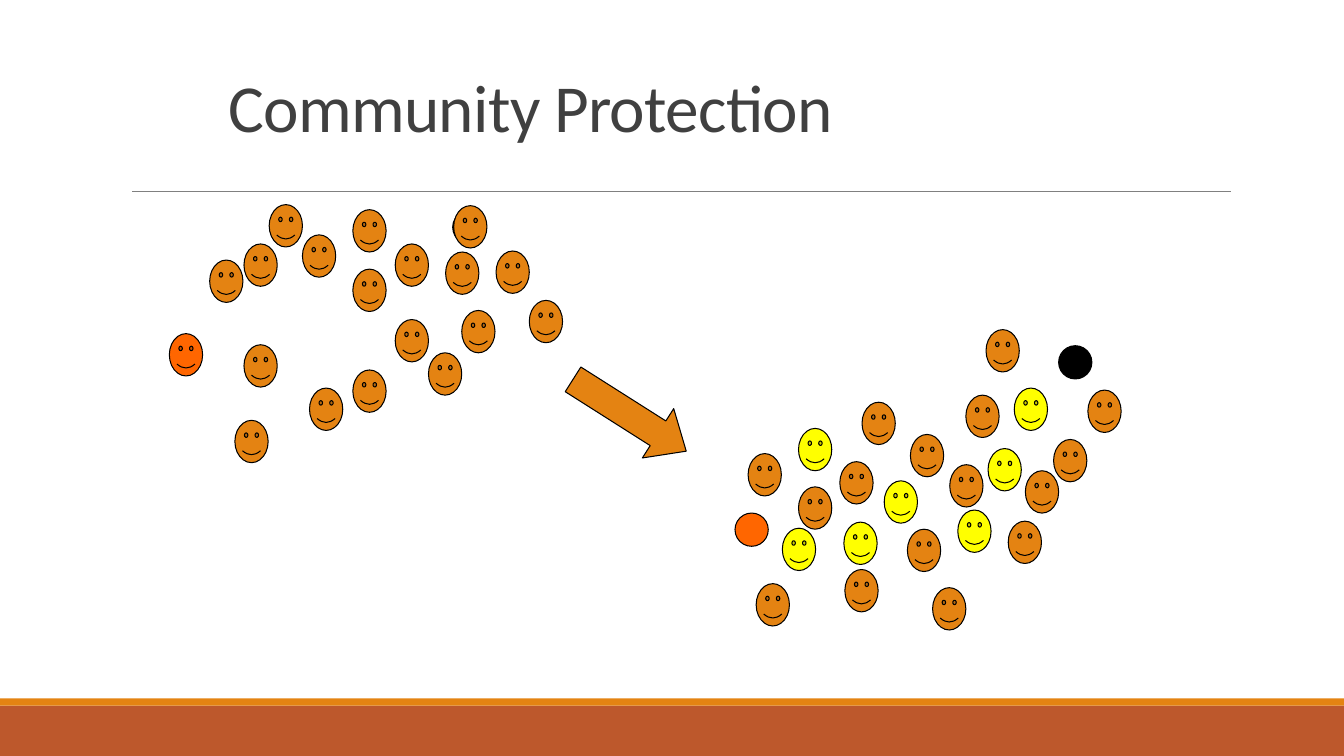
from dataclasses import dataclass

from lxml import etree
from pptx import Presentation
from pptx import util as u
from pptx.dml.color import RGBColor
from pptx.enum import shapes, text
from pptx.oxml.ns import qn
from pptx.shapes.autoshape import Shape
from pptx.slide import Slide

EMU_PER_PX = 9144  # 100 px to the inch
PAGE_WIDTH, PAGE_HEIGHT = 1333, 750


@dataclass(frozen=True)
class Theme:
    person: str = "E48312"
    immune: str = "FFFF00"
    infected: str = "FF6600"
    dark: str = "000000"
    footer: str = "BD582C"
    rule: str = "808080"
    title: str = "404040"
    font: str = "Calibri"
    title_size: int = 48
    outline_width: float = 0.75
    rule_width: float = 0.5


@dataclass(frozen=True)
class Box:
    left: int
    top: int
    width: int
    height: int


@dataclass(frozen=True)
class Crowd:
    """Equal figures in one colour, given by their top left corners."""
    kind: shapes.MSO_SHAPE
    width: int
    height: int
    colour: str
    corners: tuple[tuple[int, int], ...]


THEME = Theme()
FACE = (shapes.MSO_SHAPE.SMILEY_FACE, 33, 42)
DOT = (shapes.MSO_SHAPE.OVAL, 33, 33)
SMILE = 0.0465

CROWDS = (
    Crowd(*DOT, THEME.dark, ((1050, 343), (449, 209))),
    Crowd(*DOT, THEME.infected, ((729, 509),)),
    # Community before protection
    Crowd(*FACE, THEME.person, (
        (307, 385), (350, 367), (425, 350), (392, 317), (300, 233), (392, 242),
        (458, 308), (350, 208), (442, 250), (525, 298), (242, 342), (242, 242),
        (350, 267), (208, 258), (492, 249), (267, 203), (233, 417), (450, 204))),
    Crowd(*FACE, THEME.infected, ((168, 331),)),
    # Community with immune members
    Crowd(*FACE, THEME.person, (
        (1000, 517), (838, 565), (742, 450), (833, 458), (900, 525), (903, 431),
        (750, 579), (1045, 436), (792, 483), (1017, 467), (925, 583), (958, 392),
        (978, 327), (1079, 387), (942, 461), (855, 399))),
    Crowd(*FACE, THEME.immune, (
        (792, 425), (877, 477), (950, 506), (837, 518), (980, 445), (776, 524),
        (1006, 385))),
)


def px(length: int) -> u.Emu:
    return u.Emu(length * EMU_PER_PX)


def place(box: Box) -> tuple[u.Emu, ...]:
    return px(box.left), px(box.top), px(box.width), px(box.height)


def add_figure(page: Slide, kind: shapes.MSO_SHAPE, box: Box, colour: str,
               outlined: bool = True) -> Shape:
    figure = page.shapes.add_shape(kind, *place(box))
    figure.shadow.inherit = False
    figure.fill.solid()
    figure.fill.fore_color.rgb = RGBColor.from_string(colour)
    if outlined:
        figure.line.color.rgb = RGBColor.from_string(THEME.dark)
        figure.line.width = u.Pt(THEME.outline_width)
    else:
        figure.line.fill.background()
    return figure


def add_crowd(page: Slide, crowd: Crowd) -> None:
    for left, top in crowd.corners:
        box = Box(left, top, crowd.width, crowd.height)
        figure = add_figure(page, crowd.kind, box, crowd.colour)
        if crowd.kind == shapes.MSO_SHAPE.SMILEY_FACE:
            figure.adjustments[0] = SMILE


def add_frame(page: Slide) -> None:
    """Footer bands and the rule under the title."""
    bar = shapes.MSO_SHAPE.RECTANGLE
    add_figure(page, bar, Box(0, 700, PAGE_WIDTH, 50), THEME.footer, outlined=False)
    add_figure(page, bar, Box(0, 693, PAGE_WIDTH, 7), THEME.person, outlined=False)
    rule = page.shapes.add_connector(
        shapes.MSO_CONNECTOR.STRAIGHT, px(131), px(190), px(1221), px(190))
    rule.line.color.rgb = RGBColor.from_string(THEME.rule)
    rule.line.width = u.Pt(THEME.rule_width)
    etree.SubElement(rule._element.spPr, qn("a:effectLst"))


def add_title(page: Slide, words: str) -> None:
    frame = page.shapes.add_textbox(*place(Box(217, 25, 900, 125))).text_frame
    frame.word_wrap = True
    frame.vertical_anchor = text.MSO_ANCHOR.BOTTOM
    para = frame.paragraphs[0]
    para.line_spacing = 0.85
    para.font.name = THEME.font
    para.font.size = u.Pt(THEME.title_size)
    para.font.color.rgb = RGBColor.from_string(THEME.title)
    span = para.add_run()
    span.text = words
    span._r.get_or_add_rPr().set("spc", "-50")


def add_arrow(page: Slide) -> None:
    arrow = add_figure(page, shapes.MSO_SHAPE.RIGHT_ARROW,
                       Box(558, 383, 133, 58), THEME.person)
    arrow.rotation = 32.4
    arrow.adjustments[0] = 0.5
    arrow.adjustments[1] = 0.571


def main() -> None:
    deck = Presentation()
    deck.slide_width, deck.slide_height = px(PAGE_WIDTH), px(PAGE_HEIGHT)
    page = deck.slides.add_slide(deck.slide_layouts[6])
    add_frame(page)
    add_title(page, "Community Protection")
    for crowd in CROWDS:
        add_crowd(page, crowd)
    add_arrow(page)
    deck.save("out.pptx")


if __name__ == "__main__":
    main()
